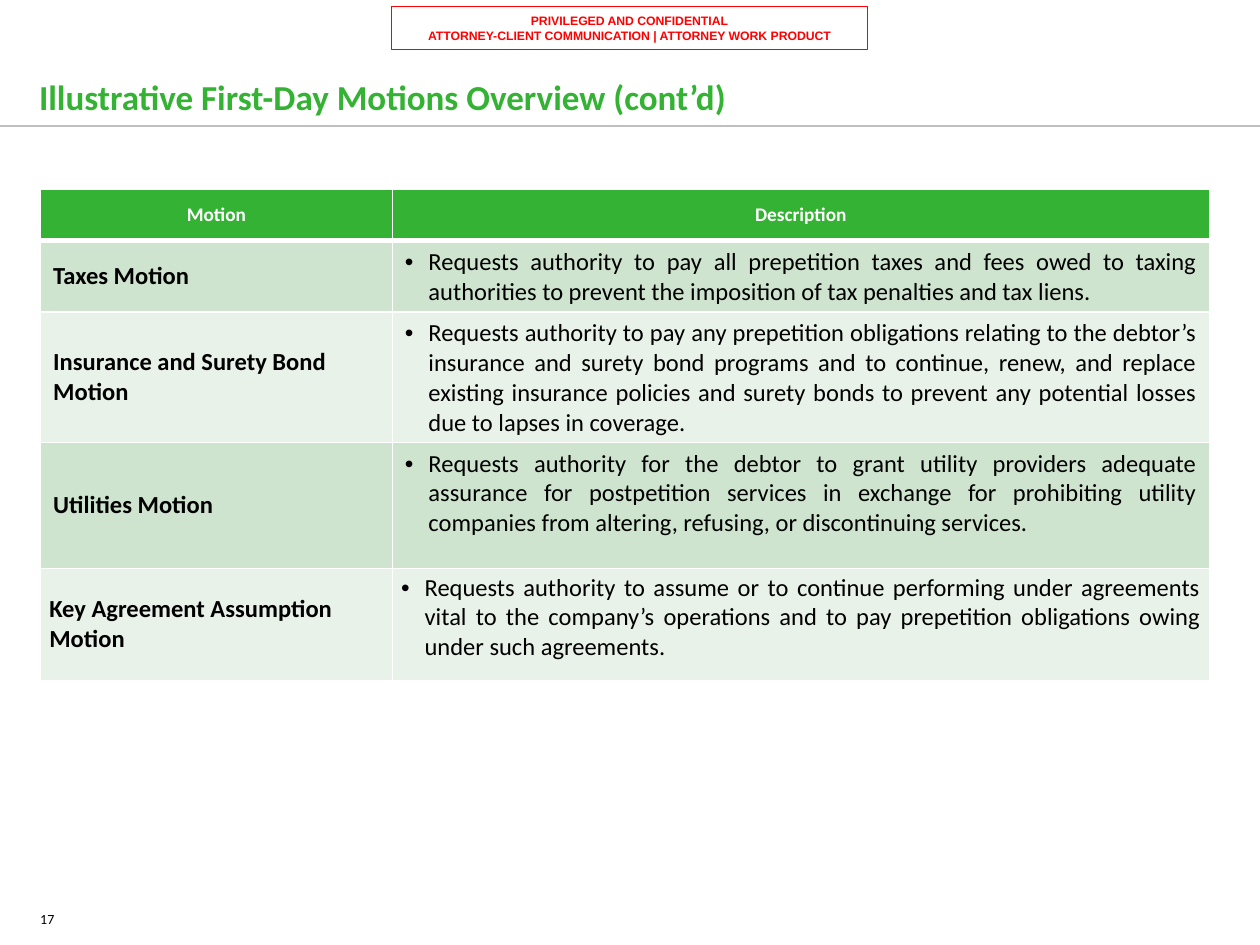
from lxml import etree
from pptx import Presentation
from pptx import util as u
from pptx.dml.color import RGBColor
from pptx.enum import shapes, text
from pptx.oxml.ns import qn

GREEN, RED, WHITE, BLACK = "34B233", "FF0000", "FFFFFF", "000000"
BANDS = ("CEE4CE", "E8F2E8")
COLUMNS = (201, 467)
HEADER_HEIGHT = 29.5
WIDE, NARROW = (7.2, 3.6), (5, 2.5)
MOTIONS = [
    ("Taxes Motion",
     "Requests authority to pay all prepetition taxes and fees owed to taxing authorities "
     "to prevent the imposition of tax penalties and tax liens.", 40, WIDE),
    ("Insurance and Surety Bond Motion",
     "Requests authority to pay any prepetition obligations relating to the debtor’s "
     "insurance and surety bond programs and to continue, renew, and replace existing "
     "insurance policies and surety bonds to prevent any potential losses due to lapses "
     "in coverage.", 72, WIDE),
    ("Utilities Motion",
     "Requests authority for the debtor to grant utility providers adequate assurance for "
     "postpetition services in exchange for prohibiting utility companies from altering, "
     "refusing, or discontinuing services.", 72, WIDE),
    ("Key Agreement Assumption Motion",
     "Requests authority to assume or to continue performing under agreements vital to the "
     "company’s operations and to pay prepetition obligations owing under such agreements.",
     64, NARROW),
]


def color(value):
    """Turn a hex string into a colour."""
    return RGBColor.from_string(value)


def points(*values):
    """Turn numbers into lengths in points."""
    return [u.Pt(value) for value in values]


def format_paragraph(paragraph, size, hue, bold=False, name="Calibri", align=text.PP_ALIGN.LEFT):
    """Set the alignment and font of a paragraph."""
    paragraph.alignment = align
    font = paragraph.font
    font.size, font.bold, font.name = u.Pt(size), bold, name
    font.color.rgb = color(hue)


def add_bullet(paragraph, indent):
    """Give a paragraph a hanging bullet."""
    properties = paragraph._p.get_or_add_pPr()
    properties.set("marL", str(u.Pt(indent)))
    properties.set("indent", str(-u.Pt(indent)))
    etree.SubElement(properties, qn("a:buFont"), typeface="Arial")
    etree.SubElement(properties, qn("a:buChar"), char="•")


def set_insets(target, horizontal, vertical):
    """Set the inner margins of a cell or text frame."""
    target.margin_left = target.margin_right = u.Pt(horizontal)
    target.margin_top = target.margin_bottom = u.Pt(vertical)


def add_borders(cell, top=1, bottom=1):
    """Draw white borders around a cell."""
    properties = cell._tc.get_or_add_tcPr()
    for side, width in (("L", 1), ("R", 1), ("T", top), ("B", bottom)):
        line = etree.SubElement(properties, qn(f"a:ln{side}"), w=str(u.Pt(width)))
        fill = etree.SubElement(line, qn("a:solidFill"))
        etree.SubElement(fill, qn("a:srgbClr"), val=WHITE)


def fill_cell(cell, words, hue, insets=WIDE, anchor=text.MSO_ANCHOR.MIDDLE, **borders):
    """Write and colour a cell, and return its paragraph."""
    add_borders(cell, **borders)
    cell.fill.solid()
    cell.fill.fore_color.rgb = color(hue)
    set_insets(cell, *insets)
    cell.vertical_anchor = anchor
    cell.text = words
    return cell.text_frame.paragraphs[0]


def add_title(slide, words):
    """Place the slide title."""
    title = slide.shapes.title
    title.left, title.top, title.width, title.height = points(22.3, 15.8, 669, 54.7)
    frame = title.text_frame
    frame.text = words
    frame.auto_size = text.MSO_AUTO_SIZE.NONE
    frame.vertical_anchor = text.MSO_ANCHOR.BOTTOM
    set_insets(frame, 7.2, 3.6)
    frame.margin_left = 0
    format_paragraph(frame.paragraphs[0], 20, GREEN, bold=True)


def add_rule(slide):
    """Draw the grey line under the title."""
    rule = slide.shapes.add_connector(shapes.MSO_CONNECTOR.STRAIGHT, *points(0, 72, 720, 72))
    rule.line.color.rgb = color("BFBFBF")
    rule.line.width = u.Pt(0.75)
    etree.SubElement(rule._element.spPr, qn("a:effectLst"))


def add_notice(slide, lines):
    """Add the outlined confidentiality notice."""
    shape = slide.shapes.add_shape(shapes.MSO_SHAPE.RECTANGLE, *points(223.7, 3.7, 272, 24.5))
    shape.shadow.inherit = False
    shape.fill.background()
    shape.line.color.rgb = color(RED)
    shape.line.width = u.Pt(0.75)
    frame = shape.text_frame
    frame.word_wrap = True
    frame.text = "\n".join(lines)
    set_insets(frame, 7.2, 3.6)
    for paragraph in frame.paragraphs:
        format_paragraph(paragraph, 7, RED, True, "Arial", text.PP_ALIGN.CENTER)


def add_page_number(slide, number):
    """Add the page number at the lower left."""
    frame = slide.shapes.add_textbox(*points(23, 517, 151, 17)).text_frame
    frame.word_wrap = True
    frame.text = number
    set_insets(frame, 0, 3.6)
    format_paragraph(frame.paragraphs[0], 8, BLACK)


def add_motions_table(slide):
    """Add the table of motions and descriptions."""
    heights = [HEADER_HEIGHT] + [motion[2] for motion in MOTIONS]
    table = slide.shapes.add_table(
        len(heights), 2, *points(23.2, 108, sum(COLUMNS), sum(heights))).table
    for column, width in zip(table.columns, COLUMNS):
        column.width = u.Pt(width)
    for row, height in zip(table.rows, heights):
        row.height = u.Pt(height)
    for index, heading in enumerate(("Motion", "Description")):
        paragraph = fill_cell(table.cell(0, index), heading, GREEN, bottom=3)
        format_paragraph(paragraph, 11, WHITE, bold=True, align=text.PP_ALIGN.CENTER)
    for index, (motion, description, _, insets) in enumerate(MOTIONS):
        row, hue, top = index + 1, BANDS[index % 2], 1 if index else 3
        paragraph = fill_cell(table.cell(row, 0), motion, hue, insets, top=top)
        format_paragraph(paragraph, 14, BLACK, bold=True)
        paragraph = fill_cell(
            table.cell(row, 1), description, hue, insets, text.MSO_ANCHOR.TOP, top=top)
        add_bullet(paragraph, 13.5)
        format_paragraph(paragraph, 14, BLACK, align=text.PP_ALIGN.JUSTIFY)


def main():
    """Build and save the slide."""
    presentation = Presentation()
    presentation.slide_width, presentation.slide_height = points(720, 540)
    slide = presentation.slides.add_slide(presentation.slide_layouts[5])
    add_page_number(slide, "17")
    add_rule(slide)
    add_notice(slide, ("PRIVILEGED AND CONFIDENTIAL",
                       "ATTORNEY-CLIENT COMMUNICATION | ATTORNEY WORK PRODUCT"))
    add_title(slide, "Illustrative First-Day Motions Overview (cont’d)")
    add_motions_table(slide)
    presentation.save("out.pptx")


if __name__ == "__main__":
    main()
